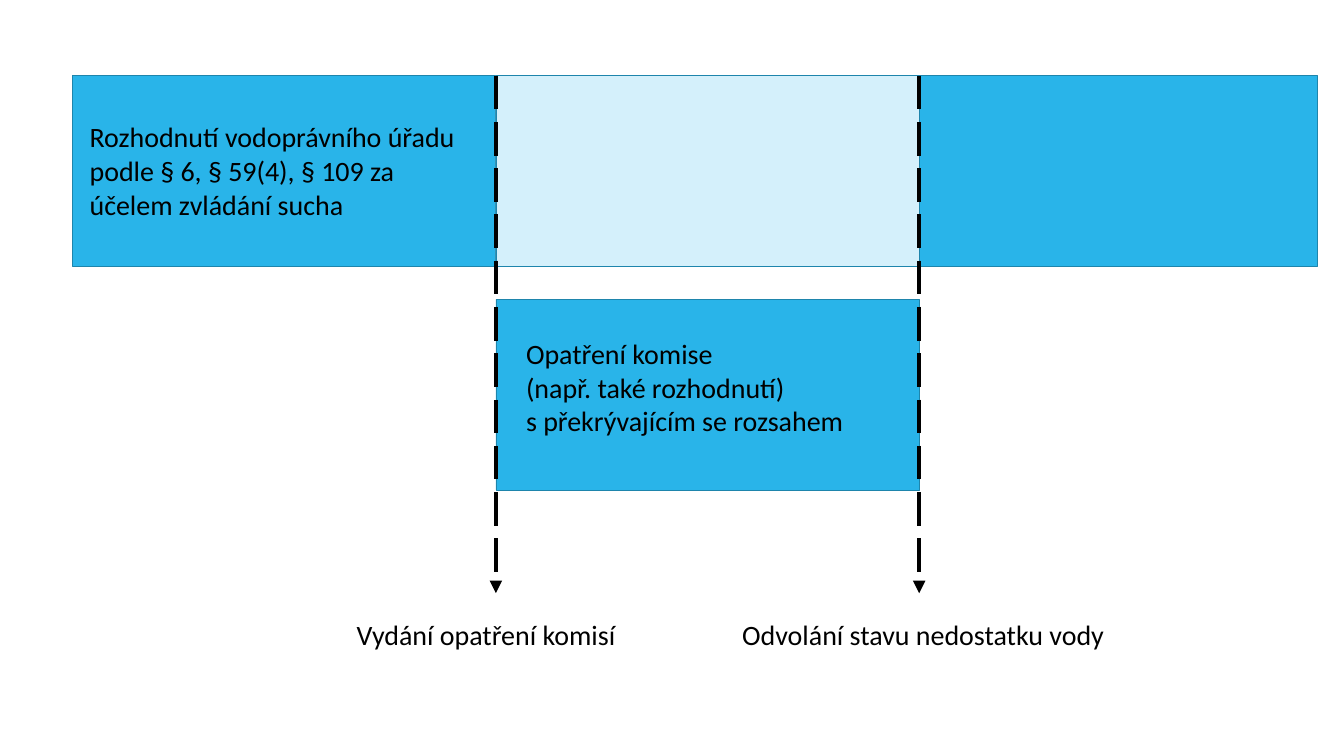
from lxml import etree
from pptx import Presentation
from pptx.dml.color import RGBColor
from pptx.enum.dml import MSO_LINE
from pptx.enum.shapes import MSO_CONNECTOR, MSO_SHAPE
from pptx.oxml.ns import qn
from pptx.util import Pt

PX = 9144  # EMU per px, 100 px to the inch
RECTANGLE = MSO_SHAPE.RECTANGLE
STRAIGHT = MSO_CONNECTOR.STRAIGHT
LONG_DASH = MSO_LINE.LONG_DASH
COLORS = {"active": "29B4E9", "suspended": "D4F0FB", "border": "1E85AC", "ink": "000000"}

# Time axis and rows
START, ISSUED, REVOKED, END = 143, 984, 1824, 2614
DECISION_TOP, MEASURE_TOP, BAR_HEIGHT = 150, 594, 378
ARROW_BOTTOM, LABEL_TOP = 1177, 1221

# from, to, top, color
BARS = [
    (START, ISSUED, DECISION_TOP, "active"),
    (ISSUED, REVOKED, MEASURE_TOP, "active"),
    (ISSUED, REVOKED, DECISION_TOP, "suspended"),
    (REVOKED, END, DECISION_TOP, "active"),
]
# left, top, width, height, paragraphs
TEXTS = [
    (168, 233, 790, 212, ["Rozhodnutí vodoprávního úřadu podle § 6, § 59(4), § 109 za účelem zvládání sucha"]),
    (1034, 663, 773, 212, ["Opatření komise", "(např. také rozhodnutí)", "s překrývajícím se rozsahem"]),
    (698, LABEL_TOP, 572, 77, ["Vydání opatření komisí"]),
    (1463, LABEL_TOP, 757, 77, ["Odvolání stavu nedostatku vody"]),
]


def px(*lengths):
    return [length * PX for length in lengths]


def color(name):
    return RGBColor.from_string(COLORS[name])


def add_bar(slide, start, end, top, fill):
    shape = slide.shapes.add_shape(RECTANGLE, *px(start, top, end - start, BAR_HEIGHT))
    shape.shadow.inherit = False
    shape.fill.solid()
    shape.fill.fore_color.rgb = color(fill)
    shape.line.color.rgb = color("border")
    shape.line.width = Pt(1)


def add_event_arrow(slide, x):
    arrow = slide.shapes.add_connector(STRAIGHT, *px(x, DECISION_TOP, x, ARROW_BOTTOM))
    arrow.line.color.rgb = color("ink")
    arrow.line.width = Pt(6)
    arrow.line.dash_style = LONG_DASH
    etree.SubElement(arrow.line._get_or_add_ln(), qn("a:tailEnd"), type="triangle")
    etree.SubElement(arrow._element.spPr, qn("a:effectLst"))


def add_text(slide, left, top, width, height, lines):
    frame = slide.shapes.add_textbox(*px(left, top, width, height)).text_frame
    frame.word_wrap = True
    frame.text = "\n".join(lines)
    for paragraph in frame.paragraphs:
        paragraph.font.name = "Calibri"
        paragraph.font.size = Pt(40)
        paragraph.font.color.rgb = color("ink")


def main():
    presentation = Presentation()
    presentation.slide_width, presentation.slide_height = px(2667, 1500)
    slide = presentation.slides.add_slide(presentation.slide_layouts[6])
    for bar in BARS:
        add_bar(slide, *bar)
    for event in (ISSUED, REVOKED):
        add_event_arrow(slide, event)
    for text in TEXTS:
        add_text(slide, *text)
    presentation.save("out.pptx")


if __name__ == "__main__":
    main()
